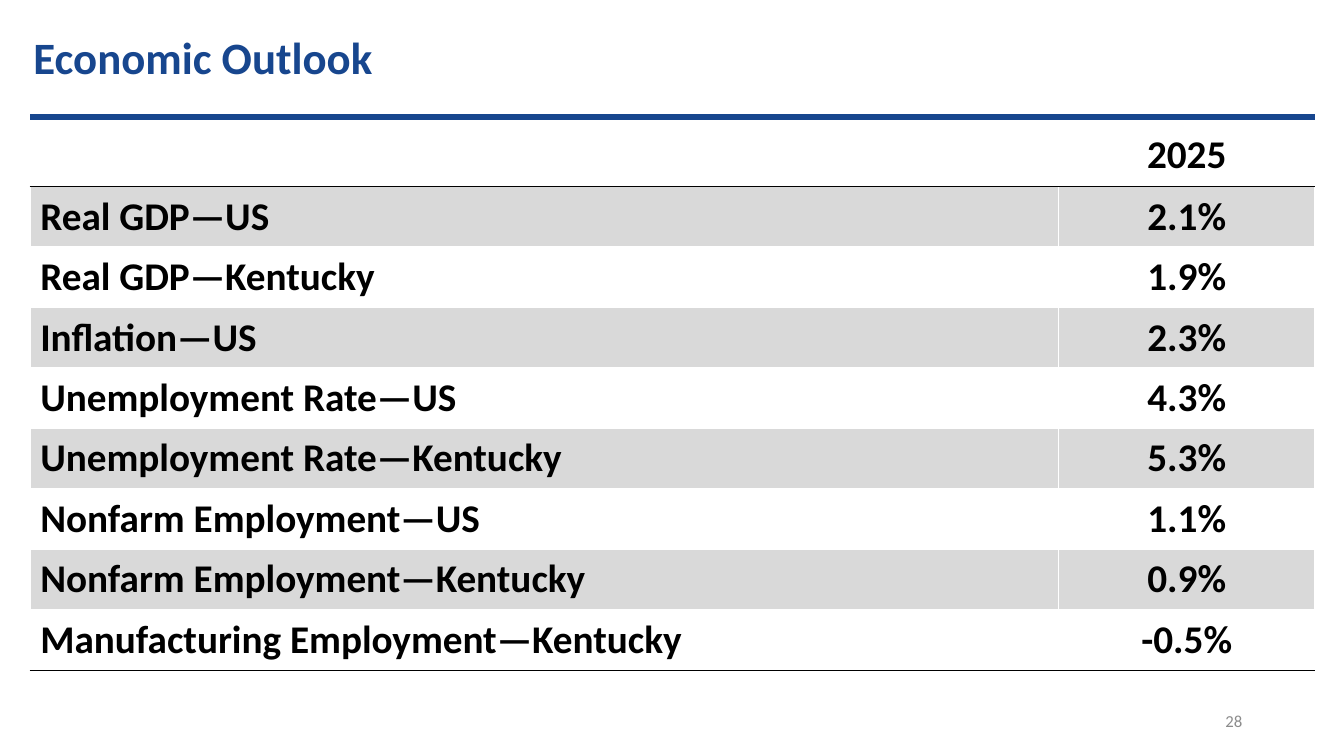
from dataclasses import dataclass

import pptx
import pptx.dml.color
import pptx.enum.shapes
import pptx.enum.text
import pptx.oxml
import pptx.oxml.ns
import pptx.util
from pptx.util import Inches

ALIGN = pptx.enum.text.PP_ALIGN
ANCHOR = pptx.enum.text.MSO_ANCHOR


@dataclass(frozen=True)
class Theme:
    font: str = "Calibri"
    blue: str = "17468E"
    black: str = "000000"
    white: str = "FFFFFF"
    band: str = "D9D9D9"
    gray: str = "8C8C8C"
    title_size: int = 32
    table_size: int = 28
    number_size: int = 12


@dataclass(frozen=True)
class Forecast:
    indicator: str
    value: str


THEME = Theme()
TABLE_LEFT, TABLE_TOP = 0.3, 1.23
COLUMN_WIDTHS = (10.2, 2.54)
HEADER_HEIGHT, ROW_HEIGHT = 0.62, 0.6
RULE_TOP = 1.16

FORECASTS = [
    Forecast("Real GDP—US", "2.1%"),
    Forecast("Real GDP—Kentucky", "1.9%"),
    Forecast("Inflation—US", "2.3%"),
    Forecast("Unemployment Rate—US", "4.3%"),
    Forecast("Unemployment Rate—Kentucky", "5.3%"),
    Forecast("Nonfarm Employment—US", "1.1%"),
    Forecast("Nonfarm Employment—Kentucky", "0.9%"),
    Forecast("Manufacturing Employment—Kentucky", "-0.5%"),
]


def rgb(color: str) -> pptx.dml.color.RGBColor:
    return pptx.dml.color.RGBColor.from_string(color)


def write_text(frame, text: str, size: int, color: str, bold: bool, align) -> None:
    frame.text = text
    paragraph = frame.paragraphs[0]
    paragraph.alignment = align
    formats = {"name": THEME.font, "size": pptx.util.Pt(size), "bold": bold}
    for name, value in formats.items():
        setattr(paragraph.font, name, value)
    paragraph.font.color.rgb = rgb(color)


def set_borders(cell, top: str, bottom: str) -> None:
    """Give the cell white side borders and the given top and bottom colours."""
    sides = {"lnL": THEME.white, "lnR": THEME.white, "lnT": top, "lnB": bottom}
    properties = cell._tc.get_or_add_tcPr()
    for position, (side, color) in enumerate(sides.items()):
        border = pptx.oxml.parse_xml(
            f'<a:{side} {pptx.oxml.ns.nsdecls("a")} w="{pptx.util.Pt(1)}">'
            f'<a:solidFill><a:srgbClr val="{color}"/></a:solidFill></a:{side}>'
        )
        properties.insert(position, border)


def add_title(slide, text: str) -> None:
    title = slide.shapes.title
    box = {"left": 0.23, "top": 0.24, "width": 10.95, "height": 0.64}
    for name, value in box.items():
        setattr(title, name, Inches(value))
    title.text_frame.vertical_anchor = ANCHOR.TOP
    write_text(title.text_frame, text, THEME.title_size, THEME.blue, True, ALIGN.LEFT)


def add_slide_number(slide, number: str) -> None:
    box = slide.shapes.add_textbox(Inches(9.42), Inches(6.95), Inches(3), Inches(0.4))
    box.text_frame.word_wrap = True
    box.text_frame.vertical_anchor = ANCHOR.MIDDLE
    write_text(box.text_frame, number, THEME.number_size, THEME.gray, False, ALIGN.RIGHT)


def add_forecast_table(slide, year: str, forecasts: list[Forecast]) -> None:
    rows = [("", year)] + [(item.indicator, item.value) for item in forecasts]
    heights = [HEADER_HEIGHT] + [ROW_HEIGHT] * len(forecasts)
    table = slide.shapes.add_table(
        len(rows), len(COLUMN_WIDTHS), Inches(TABLE_LEFT), Inches(TABLE_TOP),
        Inches(sum(COLUMN_WIDTHS)), Inches(sum(heights)),
    ).table
    for column, width in zip(table.columns, COLUMN_WIDTHS):
        column.width = Inches(width)
    ruled_rows = (0, len(rows) - 1)
    for index, texts in enumerate(rows):
        table.rows[index].height = Inches(heights[index])
        top = THEME.black if index - 1 in ruled_rows else THEME.white
        bottom = THEME.black if index in ruled_rows else THEME.white
        for cell, text, align in zip(
            table.rows[index].cells, texts, (ALIGN.LEFT, ALIGN.CENTER)
        ):
            cell.vertical_anchor = ANCHOR.MIDDLE
            cell.fill.solid()
            cell.fill.fore_color.rgb = rgb(THEME.band if index % 2 else THEME.white)
            set_borders(cell, top, bottom)
            write_text(cell.text_frame, text, THEME.table_size, THEME.black, True, align)


def add_title_rule(slide) -> None:
    rule = slide.shapes.add_connector(
        pptx.enum.shapes.MSO_CONNECTOR.STRAIGHT,
        Inches(TABLE_LEFT), Inches(RULE_TOP),
        Inches(TABLE_LEFT + sum(COLUMN_WIDTHS)), Inches(RULE_TOP),
    )
    rule.line.color.rgb = rgb(THEME.blue)
    rule.line.width = pptx.util.Pt(4.5)
    rule._element.spPr.append(
        pptx.oxml.parse_xml(f'<a:effectLst {pptx.oxml.ns.nsdecls("a")}/>')
    )


def main() -> None:
    presentation = pptx.Presentation()
    presentation.slide_width = Inches(13.33)
    presentation.slide_height = Inches(7.5)
    title_only = presentation.slide_layouts.get_by_name("Title Only")
    slide = presentation.slides.add_slide(title_only)
    add_title(slide, "Economic Outlook")
    add_slide_number(slide, "28")
    add_forecast_table(slide, "2025", FORECASTS)
    add_title_rule(slide)
    presentation.save("out.pptx")


if __name__ == "__main__":
    main()
